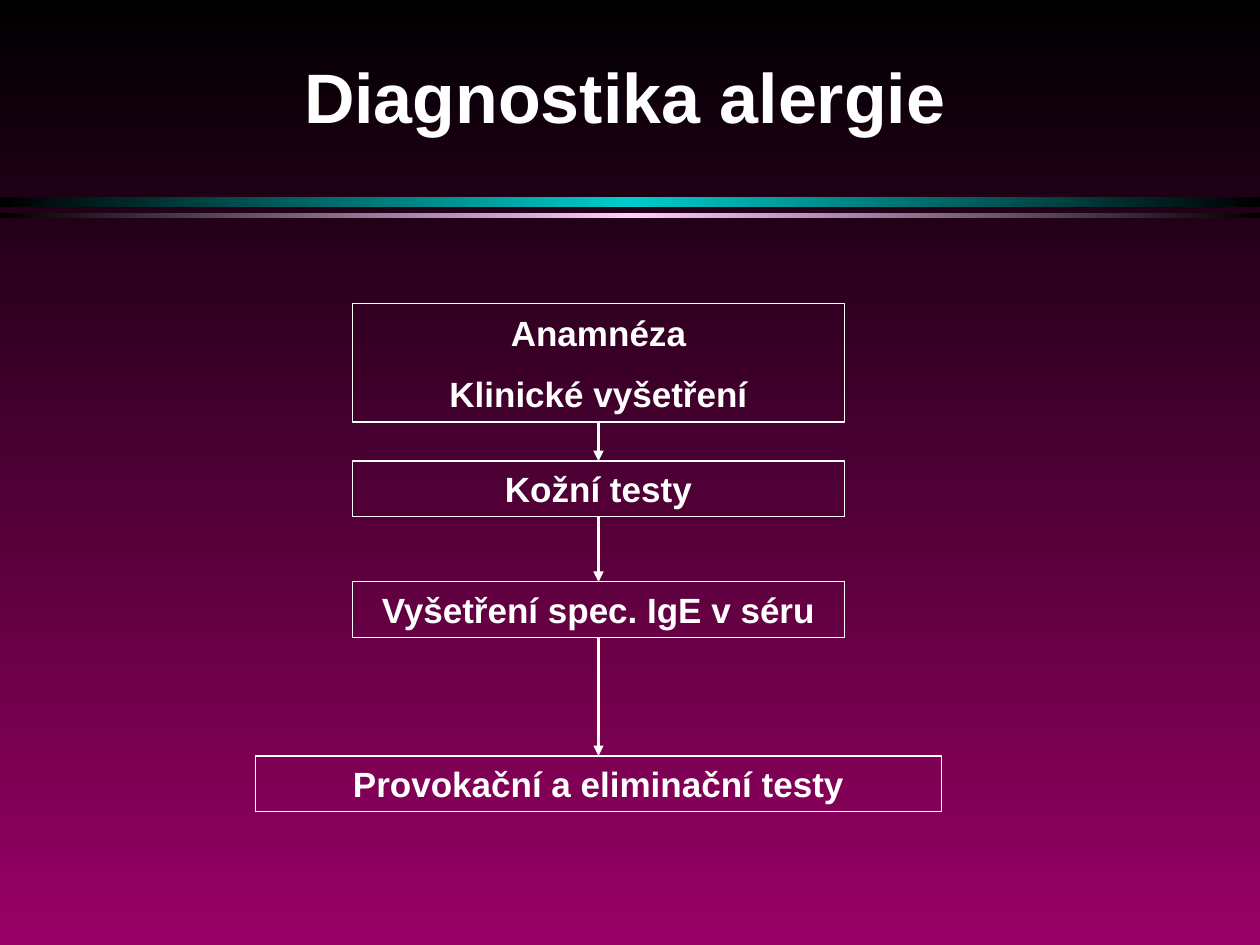
from copy import deepcopy
from itertools import pairwise
from pptx import Presentation
from pptx.dml.color import RGBColor
from pptx.enum.shapes import MSO_CONNECTOR as Link, MSO_SHAPE as Kind
from pptx.enum.text import MSO_ANCHOR as Anchor, PP_ALIGN as Align
from pptx.oxml.ns import qn
from pptx.util import Pt
from lxml.etree import SubElement as Sub

WHITE = "FFFFFF"
STEPS = [
    (173.5, 281, 67.7, ["Anamnéza", "Klinické vyšetření"]),
    (263.5, 281, 31.7, ["Kožní testy"]),
    (332.5, 281, 31.7, ["Vyšetření spec. IgE v séru"]),
    (432, 392, 31.7, ["Provokační a eliminační testy"]),
]


def color(code):
    return RGBColor.from_string(code)


def blend(fill, node, codes, angle):
    fill.gradient()
    fill.gradient_angle = angle
    stops = node.xpath(".//a:gsLst")[0]
    for _ in codes[2:]:
        stops.append(deepcopy(stops[-1]))
    for i, (stop, code) in enumerate(zip(fill.gradient_stops, codes)):
        stop.position = i / (len(codes) - 1)
        stop.color.rgb = color(code)


def write(frame, lines, size=20, font="Arial", ink=WHITE, bold=True,
          anchor=Anchor.MIDDLE, gap=11):
    frame.word_wrap = True
    frame.vertical_anchor = anchor
    for i, line in enumerate(lines):
        para = frame.paragraphs[0] if i == 0 else frame.add_paragraph()
        para.alignment = Align.CENTER
        para.space_before = Pt(gap if i else 0)
        run = para.add_run()
        run.text = line
        run.font.size, run.font.name, run.font.bold = Pt(size), font, bold
        run.font.color.rgb = color(ink)


def add_box(slide, left, top, width, height):
    box = slide.shapes.add_shape(
        Kind.RECTANGLE, Pt(left), Pt(top), Pt(width), Pt(height))
    box.shadow.inherit = False
    return box


def add_band(slide, left, top, width, height, glow):
    band = add_box(slide, left, top, width, height)
    band.line.fill.background()
    blend(band.fill, band._element, ["000000", glow, "000000"], 0)


def add_title(slide, left, top, width, height):
    title = slide.shapes.title
    title.left, title.top = Pt(left), Pt(top)
    title.width, title.height = Pt(width), Pt(height)
    frame = title.text_frame
    frame.margin_bottom = Pt(49)
    write(frame, ["Diagnostika alergie"], size=40, anchor=Anchor.BOTTOM)


def add_step(slide, left, top, width, height, lines):
    step = add_box(slide, left, top, width, height)
    step.fill.background()
    step.line.color.rgb = color(WHITE)
    step.line.width = Pt(0.75)
    write(step.text_frame, lines)
    return step


def add_arrow(slide, start, end):
    arrow = slide.shapes.add_connector(Link.STRAIGHT, 0, 0, 0, 0)
    arrow.begin_connect(start, 2)
    arrow.end_connect(end, 0)
    arrow.line.color.rgb = color(WHITE)
    arrow.line.width = Pt(1.5)
    Sub(arrow.line._get_or_add_ln(), qn("a:tailEnd"), type="triangle")
    Sub(arrow._element.spPr, qn("a:effectLst"))


def add_flow(slide, center):
    steps = [add_step(slide, center - width / 2, top, width, height, lines)
             for top, width, height, lines in STEPS]
    for start, end in pairwise(steps):
        add_arrow(slide, start, end)


def main():
    deck = Presentation()
    deck.slide_width, deck.slide_height = Pt(720), Pt(540)
    slide = deck.slides.add_slide(deck.slide_layouts[5])
    blend(slide.background.fill, slide._element, ["000000", "990066"], 270)
    add_band(slide, 0, 112.5, 720, 5.75, "00CCCC")
    add_band(slide, 0, 121.5, 720, 3, "FFCCFF")
    add_title(slide, 48, 37.5, 618, 90)
    add_flow(slide, 342)
    deck.save("out.pptx")


if __name__ == "__main__":
    main()
